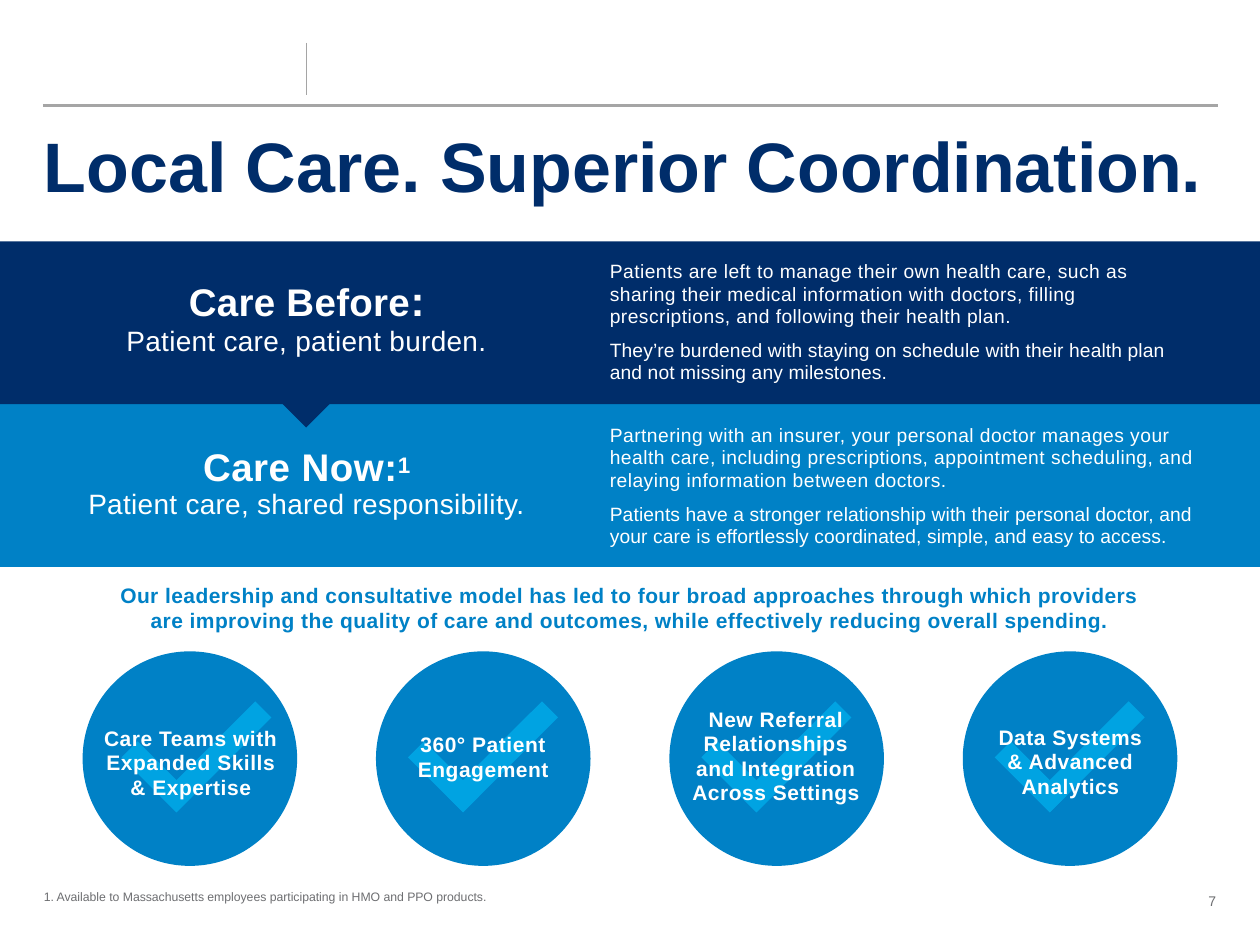
from pptx import Presentation
from pptx.dml.color import RGBColor
from pptx.enum.shapes import MSO_CONNECTOR, MSO_SHAPE
from pptx.enum.text import MSO_ANCHOR, PP_ALIGN
from pptx.oxml.ns import qn
from pptx.util import Pt
from lxml import etree

LEFT, MID, RIGHT = PP_ALIGN.LEFT, PP_ALIGN.CENTER, PP_ALIGN.RIGHT
TOP, CORE = MSO_ANCHOR.TOP, MSO_ANCHOR.MIDDLE
RECT, OVAL, WEDGE = MSO_SHAPE.RECTANGLE, MSO_SHAPE.OVAL, MSO_SHAPE.FLOWCHART_MERGE


class Theme:
    font = "Arial"
    navy = RGBColor(0x00, 0x2D, 0x6A)
    blue = RGBColor(0x00, 0x81, 0xC6)
    sky = RGBColor(0x00, 0xA3, 0xE2)
    white = RGBColor(0xFF, 0xFF, 0xFF)
    rule = RGBColor(0xA5, 0xA5, 0xA5)
    gray = RGBColor(0x6D, 0x6E, 0x71)
    title, head, colon, sub, lead, body, page, note = 40, 22, 24, 16, 12, 11, 8, 7


deck = Presentation()
deck.slide_width, deck.slide_height = Pt(720), Pt(540)
slide = deck.slides.add_slide(deck.slide_layouts[6])
shapes = slide.shapes


def draw_line(x1, y1, x2, y2, color, width):
    line = shapes.add_connector(MSO_CONNECTOR.STRAIGHT, Pt(x1), Pt(y1), Pt(x2), Pt(y2))
    line.line.color.rgb, line.line.width = color, Pt(width)
    etree.SubElement(line._element.spPr, qn("a:effectLst"))


def write(box, paras, color, size, bold=False, align=LEFT, lead=None,
          after=0, anchor=TOP, pad=False):
    """Each paragraph is a list of (text, letter spacing, changes) runs."""
    frame = shapes.add_textbox(*map(Pt, box)).text_frame
    frame.word_wrap, frame.vertical_anchor = True, anchor
    if not pad:
        frame.margin_left = frame.margin_right = 0
        frame.margin_top = frame.margin_bottom = 0
    for i, runs in enumerate(paras):
        para = frame.paragraphs[0] if i == 0 else frame.add_paragraph()
        para.alignment = align
        if lead:
            para.line_spacing = Pt(lead)
        if after and i < len(paras) - 1:
            para.space_after = Pt(after)
        for text, gap, *more in runs:
            look = more[0] if more else {}
            if look.get("fresh"):
                para.add_line_break()
            run = para.add_run()
            run.text = text
            font = run.font
            font.name, font.color.rgb = Theme.font, color
            font.size = Pt(look.get("size", size))
            font.bold = look.get("bold", bold)
            props = run._r.get_or_add_rPr()
            if gap:
                props.set("spc", str(round(gap * 100)))
            if "raised" in look:
                props.set("baseline", str(look["raised"] * 1000))


# Header rules and page number
write((540, 500.4, 162, 28.8), [[("7", 0)]], Theme.gray, Theme.page,
      align=RIGHT, anchor=CORE, pad=True)
draw_line(24.5, 60.3, 696.2, 60.3, Theme.rule, 1.5)
draw_line(175, 24.5, 175, 54, Theme.rule, 0.75)

# Bands, with the wedge pointing from before to now
for kind, box, color in [
    (RECT, (0, 231, 720, 93), Theme.blue),
    (WEDGE, (159.1, 228.5, 31.7, 15.8), Theme.navy),
    (RECT, (0, 138, 720, 93), Theme.navy),
]:
    band = shapes.add_shape(kind, *map(Pt, box))
    band.shadow.inherit = False
    band.fill.solid()
    band.fill.fore_color.rgb = color
    band.line.fill.background()

# Title and footnote
write((18, 72.7, 677.5, 50.4), [[("Local Care. Superior Coordination.", 0)]],
      Theme.navy, Theme.title, bold=True, lead=42, pad=True)
write((18, 498.2, 540, 28.8),
      [[("1. Available to Massachusetts employees participating in HMO and PPO products.", 0)]],
      Theme.gray, Theme.note, anchor=CORE, pad=True)

# Band headings
small = {"size": Theme.sub, "bold": False, "fresh": True}
for box, runs in [
    ((61.2, 167.8, 228.2, 49.7),
     [("Care Before", 0.2), (":", 0, {"size": Theme.colon}),
      ("Patient care, patient burden.", 0.2, small)]),
    ((47.5, 261.4, 255.6, 50.4),
     [("Care Now:", 0.3), ("1", 0.1, {"raised": 20}),
      ("Patient care, shared responsibility.", 0.2, small)]),
]:
    write(box, [runs], Theme.white, Theme.head, bold=True, align=MID, lead=18)

# Band details
for top, width, first, second in [
    (148.3, 336.2,
     "Patients are left to manage their own health care, such as sharing their medical "
     "information with doctors, filling prescriptions, and following their health plan.",
     "They’re burdened with staying on schedule with their health plan and not missing "
     "any milestones."),
    (241.9, 349.9,
     "Partnering with an insurer, your personal doctor manages your health care, including "
     "prescriptions, appointment scheduling, and relaying information between doctors.",
     "Patients have a stronger relationship with their personal doctor, and your care is "
     "effortlessly coordinated, simple, and easy to access."),
]:
    write((348.5, top, width, 69), [[(first, 0.25)], [(second, 0.07)]],
          Theme.white, Theme.body, lead=13, after=6)

# Lead-in to the four approaches
write((59.5, 333.4, 601.2, 28.8),
      [[("Our leadership and consultative model has led to four broad approaches through "
         "which providers are improving the quality of care and outcomes, while effectively "
         "reducing overall spending.", 0.26)]],
      Theme.blue, Theme.lead, bold=True, align=MID, lead=14)

# Four circles, each with a check mark and a label
goals = [
    (26.8, (59, 414.7, 100.1, 44.6), ["Care Teams with Expanded Skills", "& Expertise"]),
    (22.9, (232.6, 418.5, 87.1, 29.5), ["360° Patient Engagement"]),
    (22.9, (393.1, 403.9, 100.8, 59),
     ["New Referral Relationships and Integration Across Settings"]),
    (22.9, (558, 414.2, 107.3, 51.8), ["Data Systems", "& Advanced Analytics"]),
]
for i, (inset, box, words) in enumerate(goals):
    left = 47.2 + 167.65 * i
    disc = shapes.add_shape(OVAL, Pt(left), Pt(372.2), Pt(122.6), Pt(122.6))
    disc.shadow.inherit = False
    disc.fill.solid()
    disc.fill.fore_color.rgb = Theme.blue
    disc.line.fill.background()
    tick = left + inset
    draw_line(tick, 428.2, tick + 31.4, 459.6, Theme.sky, 13)
    draw_line(tick + 22.3, 459.6, tick + 76.5, 405.4, Theme.sky, 13)
    write(box, [[(word, 0.3)] for word in words], Theme.white, Theme.lead,
          bold=True, align=MID, lead=14)

deck.save("out.pptx")
